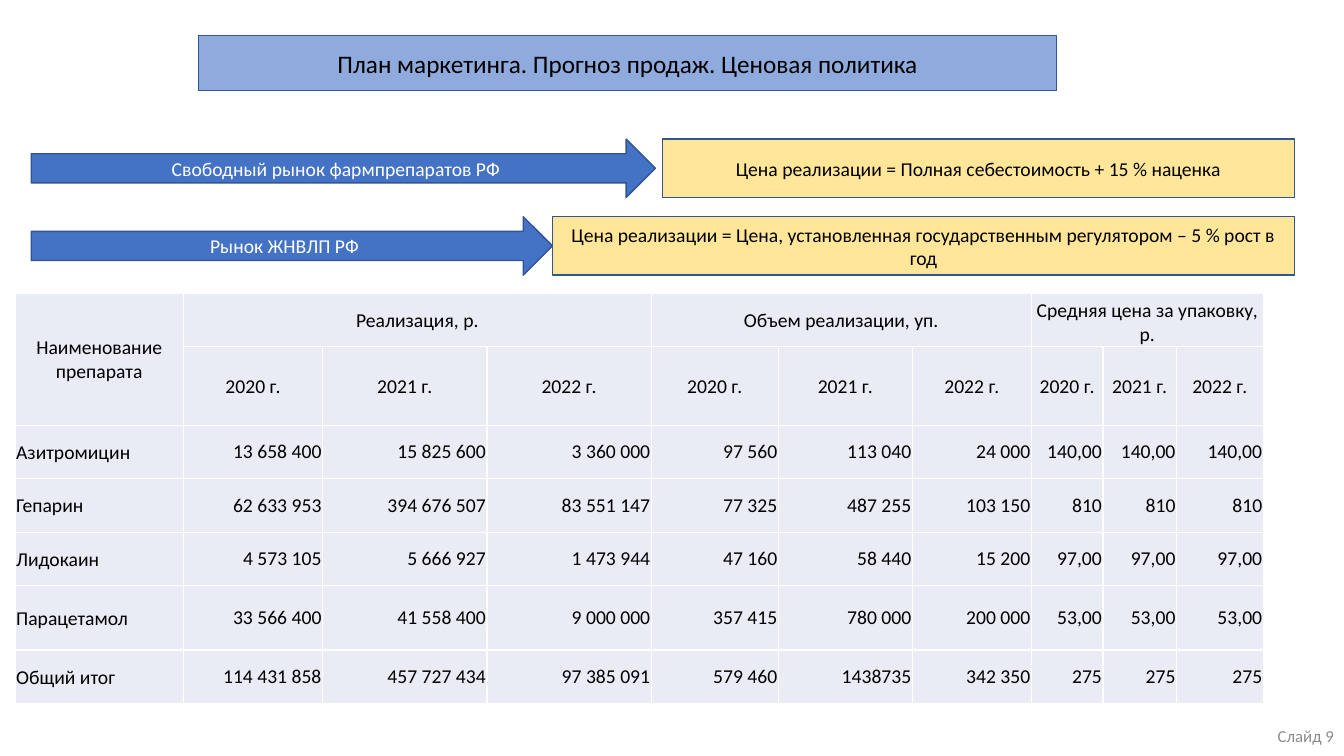
from lxml import etree
from pptx import Presentation
from pptx import util as u
from pptx.dml.color import RGBColor
from pptx.enum import shapes, text
from pptx.oxml import ns

BLUE, NAVY, YELLOW, PALE = "4472C4", "325491", "FFE699", "E9EBF5"
LEFT, CENTER, RIGHT = text.PP_ALIGN.LEFT, text.PP_ALIGN.CENTER, text.PP_ALIGN.RIGHT
MIDDLE, BOTTOM = text.MSO_ANCHOR.MIDDLE, text.MSO_ANCHOR.BOTTOM

POLICIES = [
    ("Свободный рынок фармпрепаратов РФ", 6.19,
     "Цена реализации = Полная себестоимость + 15 % наценка", 6.27),
    ("Рынок ЖНВЛП РФ", 5.17,
     "Цена реализации = Цена, установленная государственным регулятором – 5 % рост в год", 7.36),
]
GROUPS = [("Реализация, р.", MIDDLE), ("Объем реализации, уп.", MIDDLE),
          ("Средняя цена за упаковку, р.", BOTTOM)]
YEARS = ["2020 г.", "2021 г.", "2022 г."]
SALES = [
    ["Азитромицин", "13 658 400", "15 825 600", "3 360 000",
     "97 560", "113 040", "24 000", "140,00", "140,00", "140,00"],
    ["Гепарин", "62 633 953", "394 676 507", "83 551 147",
     "77 325", "487 255", "103 150", "810", "810", "810"],
    ["Лидокаин", "4 573 105", "5 666 927", "1 473 944",
     "47 160", "58 440", "15 200", "97,00", "97,00", "97,00"],
    ["Парацетамол", "33 566 400", "41 558 400", "9 000 000",
     "357 415", "780 000", "200 000", "53,00", "53,00", "53,00"],
    ["Общий итог", "114 431 858", "457 727 434", "97 385 091",
     "579 460", "1438735", "342 350", "275", "275", "275"],
]
WIDTHS = [1.67, 1.38, 1.63, 1.63, 1.26, 1.33, 1.18, 0.71, 0.73, 0.86]
HEIGHTS = [0.53, 0.78, 0.53, 0.53, 0.53, 0.64, 0.53]


def color(code):
    """Turn a hex string into a colour."""
    return RGBColor.from_string(code)


def inches(box):
    """Turn a box of numbers into lengths."""
    return [u.Inches(value) for value in box]


def write(frame, words, size=14, ink="000000", align=CENTER):
    """Put one formatted paragraph into a text frame."""
    para = frame.paragraphs[0]
    para.alignment = align
    span = para.add_run()
    span.text = words
    span.font.size = u.Pt(size)
    span.font.name = "Calibri"
    span.font.color.rgb = color(ink)


def paint(shape, fill):
    """Give a shape its fill and the common outline."""
    shape.fill.solid()
    shape.fill.fore_color.rgb = color(fill)
    shape.line.color.rgb = color(NAVY)
    shape.line.width = u.Pt(1)


def add_title(page, box):
    """Shape the title placeholder as a rounded banner."""
    title = page.shapes.title
    title.left, title.top, title.width, title.height = inches(box)
    outline = etree.SubElement(title._element.spPr, ns.qn("a:prstGeom"), prst="roundRect")
    etree.SubElement(outline, ns.qn("a:avLst"))
    paint(title, "8FAADC")
    frame = title.text_frame
    frame.auto_size = text.MSO_AUTO_SIZE.NONE
    frame.vertical_anchor = MIDDLE
    write(frame, "План маркетинга. Прогноз продаж. Ценовая политика", size=18)


def add_block(page, kind, box, words, fill, ink="000000", inset=0.1):
    """Draw one filled shape with centred words."""
    shape = page.shapes.add_shape(kind, *inches(box))
    shape.shadow.inherit = False
    paint(shape, fill)
    frame = shape.text_frame
    frame.word_wrap = True
    frame.vertical_anchor = MIDDLE
    frame.margin_left = frame.margin_right = u.Inches(inset)
    frame.margin_top = frame.margin_bottom = u.Inches(min(inset, 0.05))
    write(frame, words, ink=ink)


def add_policies(page, box):
    """Draw each market arrow beside its price rule."""
    left, top, width, height = box
    row_height = 0.58
    step = (height - row_height) / (len(POLICIES) - 1)
    for index, (market, arrow_width, rule, rule_width) in enumerate(POLICIES):
        row_top = top + index * step
        add_block(page, shapes.MSO_SHAPE.RIGHT_ARROW, (left, row_top, arrow_width, row_height),
                  market, BLUE, ink="FFFFFF", inset=0.04)
        add_block(page, shapes.MSO_SHAPE.RECTANGLE,
                  (left + width - rule_width, row_top, rule_width, row_height), rule, YELLOW)


def style_cell(cell):
    """Give a cell white borders and a pale fill."""
    properties = cell._tc.get_or_add_tcPr()
    for side in ("lnL", "lnR", "lnT", "lnB"):
        border = etree.SubElement(properties, ns.qn(f"a:{side}"), w=str(u.Pt(1)))
        fill = etree.SubElement(border, ns.qn("a:solidFill"))
        etree.SubElement(fill, ns.qn("a:srgbClr"), val="FFFFFF")
    cell.fill.solid()
    cell.fill.fore_color.rgb = color(PALE)
    cell.margin_left = cell.margin_right = cell.margin_top = u.Inches(0.01)
    cell.margin_bottom = 0


def write_cell(cell, words, align=CENTER, anchor=MIDDLE):
    """Write a table cell."""
    cell.vertical_anchor = anchor
    if align == RIGHT:
        cell.margin_left = cell.margin_top = 0
    write(cell.text_frame, words, align=align)


def add_sales(page, box):
    """Build the sales forecast table."""
    table = page.shapes.add_table(len(HEIGHTS), len(WIDTHS), *inches(box)).table
    table.first_row = table.horz_banding = False
    for column, width in zip(table.columns, WIDTHS):
        column.width = u.Inches(width)
    for row, height in zip(table.rows, HEIGHTS):
        row.height = u.Inches(height)
    for cell in table.iter_cells():
        style_cell(cell)
    table.cell(0, 0).merge(table.cell(1, 0))
    write_cell(table.cell(0, 0), "Наименование препарата")
    for index, (name, anchor) in enumerate(GROUPS):
        first = 1 + index * len(YEARS)
        table.cell(0, first).merge(table.cell(0, first + len(YEARS) - 1))
        write_cell(table.cell(0, first), name, anchor=anchor)
        for offset, year in enumerate(YEARS):
            write_cell(table.cell(1, first + offset), year)
    for row, values in enumerate(SALES, 2):
        for column, value in enumerate(values):
            write_cell(table.cell(row, column), value, align=RIGHT if column else LEFT)


def add_page_number(page, box):
    """Place the page label at the lower right."""
    frame = page.shapes.add_textbox(*inches(box)).text_frame
    frame.word_wrap = True
    frame.vertical_anchor = MIDDLE
    write(frame, "Слайд 9", size=12, ink="8C8C8C", align=RIGHT)


def main():
    """Build and save the deck."""
    deck = Presentation()
    deck.slide_width, deck.slide_height = inches((13.33, 7.5))
    page = deck.slides.add_slide(deck.slide_layouts[5])
    add_title(page, (1.97, 0.35, 8.51, 0.55))
    add_policies(page, (0.31, 1.38, 12.53, 1.35))
    add_sales(page, (0.15, 2.91, sum(WIDTHS), sum(HEIGHTS)))
    add_page_number(page, (10.33, 7.1, 3, 0.4))
    deck.save("out.pptx")


if __name__ == "__main__":
    main()
